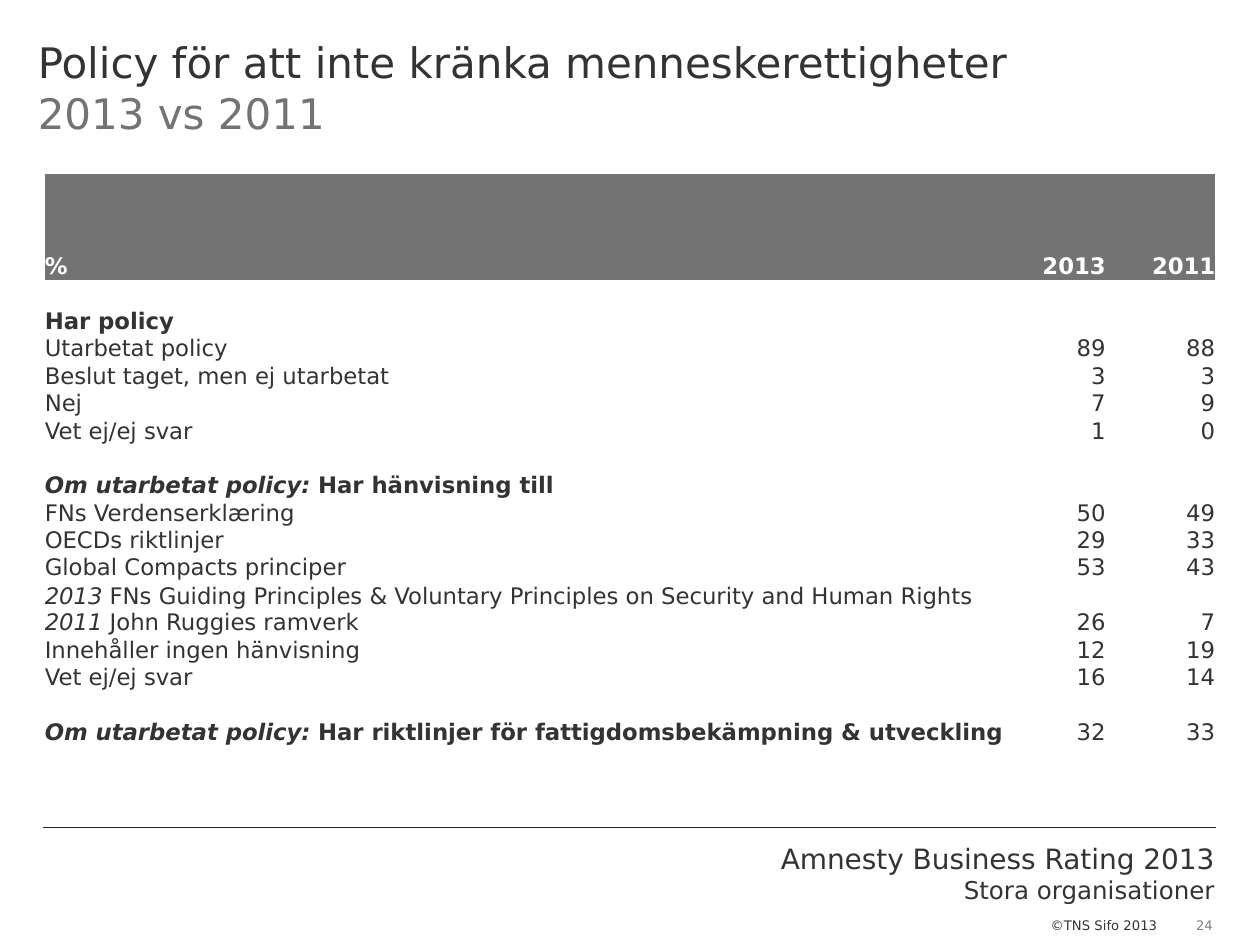
from pptx import Presentation
from pptx import util as u
from pptx.dml.color import RGBColor
from pptx.enum import shapes, text
from pptx.oxml.ns import qn
from lxml import etree

Pt = u.Pt
FONT = "DejaVu Sans"
DARK, GREY, WHITE = "333333", "737373", "FFFFFF"
LEFT, CENTER, RIGHT = text.PP_ALIGN.LEFT, text.PP_ALIGN.CENTER, text.PP_ALIGN.RIGHT
NO_STYLE = "{2D5ABB26-0587-4C30-8999-92F81FD0307C}"
TEXT_SIZE = 13

COLUMNS = [266.4, 33.8, 82.8, 74.2, 74.2, 34.6, 2.2, 37.4, 62.6]
LAST = len(COLUMNS) - 1
HEADER_HEIGHT, ROW_HEIGHT = 60.6, 15.66
IF_POLICY = ("Om utarbetat policy: ", "bi")

# Each row: label lines made of (text, style) runs, value 2013, value 2011,
# last column of the label, first column of the 2013 value.
ROWS = [
    ([[("%", "b")]], "2013", "2011", 0, 5),
    ([], "", "", 0, 5),
    ([[("Har policy", "b")]], "", "", 0, 5),
    ([[("Utarbetat policy", "")]], "89", "88", 0, 5),
    ([[("Beslut taget, men ej utarbetat", "")]], "3", "3", 0, 5),
    ([[("Nej", "")]], "7", "9", 0, 5),
    ([[("Vet ej/ej svar", "")]], "1", "0", 0, 5),
    ([], "", "", 0, 5),
    ([[IF_POLICY, ("Har hänvisning till", "b")]], "", "", 4, 5),
    ([[("FNs Verdenserklæring", "")]], "50", "49", 0, 5),
    ([[("OECDs riktlinjer", "")]], "29", "33", 0, 5),
    ([[("Global Compacts principer", "")]], "53", "43", 0, 5),
    ([[("2013 ", "i"),
       ("FNs Guiding Principles & Voluntary Principles on Security and Human Rights", "")],
      [("2011", "i"), (" John Ruggies ramverk", "")]], "26", "7", 6, 7),
    ([[("Innehåller ingen hänvisning", "")]], "12", "19", 0, 5),
    ([[("Vet ej/ej svar", "")]], "16", "14", 0, 5),
    ([], "", "", 0, 5),
    ([[IF_POLICY, ("Har riktlinjer för fattigdomsbekämpning & utveckling", "b")]],
     "32", "33", 5, 6),
]


def rgb(value):
    return RGBColor.from_string(value)


def add_run(p, words, size, color, style=""):
    r = p.add_run()
    r.text = words
    r.font.name, r.font.size = FONT, Pt(size)
    r.font.color.rgb = rgb(color)
    r.font.bold, r.font.italic = "b" in style, "i" in style


def add_text(s, box, lines, align=LEFT, insets=(7.2, 3.6, 7.2, 3.6), wrap=True):
    """Lines are (text, size, colour); insets run left, top, right, bottom."""
    tf = s.shapes.add_textbox(*map(Pt, box)).text_frame
    tf.word_wrap = wrap
    tf.margin_left, tf.margin_top, tf.margin_right, tf.margin_bottom = map(Pt, insets)
    for i, line in enumerate(lines):
        p = tf.paragraphs[0] if i == 0 else tf.add_paragraph()
        p.alignment = align
        add_run(p, *line)


def add_title(s, box):
    add_text(s, box, [("Policy för att inte kränka menneskerettigheter", 24, DARK),
                      ("2013 vs 2011", 24, GREY)], insets=(21.6, 21, 21.6, 0))


def fill_cell(cell, lines, color, align):
    tf = cell.text_frame
    for i, line in enumerate(lines):
        p = tf.paragraphs[0] if i == 0 else tf.add_paragraph()
        p.alignment = align
        for words, style in line:
            add_run(p, words, TEXT_SIZE, color, style)


def format_cell(cell, header):
    cell.margin_left = cell.margin_top = cell.margin_right = cell.margin_bottom = 0
    cell.vertical_anchor = text.MSO_ANCHOR.BOTTOM
    if header:
        cell.fill.solid()
        cell.fill.fore_color.rgb = rgb(GREY)
    else:
        cell.fill.background()
    # The end mark keeps empty cells from growing to the default text size.
    p = cell.text_frame.paragraphs[0]
    if not p.runs:
        etree.SubElement(p._p, qn("a:endParaRPr"), sz=str(TEXT_SIZE * 100))


def add_policy_table(s, left, top):
    heights = [HEADER_HEIGHT] + [ROW_HEIGHT * max(1, len(row[0])) for row in ROWS[1:]]
    frame = s.shapes.add_table(len(ROWS), len(COLUMNS), Pt(left), Pt(top),
                               Pt(sum(COLUMNS)), Pt(sum(heights)))
    table = frame.table
    table.horz_banding = False
    table._tbl.tblPr.find(qn("a:tableStyleId")).text = NO_STYLE
    for column, width in zip(table.columns, COLUMNS):
        column.width = Pt(width)
    for i, (label, now, before, label_end, value_start) in enumerate(ROWS):
        table.rows[i].height = Pt(heights[i])
        header = i == 0
        color, style = (WHITE, "b") if header else (DARK, "")
        for first, last in ((0, label_end), (value_start, LAST - 1)):
            if last > first:
                table.cell(i, first).merge(table.cell(i, last))
        fill_cell(table.cell(i, 0), label, color, LEFT)
        for column, value in ((value_start, now), (LAST, before)):
            if value:
                fill_cell(table.cell(i, column), [[(value, style)]], color, RIGHT)
        for column in range(len(COLUMNS)):
            format_cell(table.cell(i, column), header)


def add_footer(s, left, top, width):
    right = left + width
    line = s.shapes.add_connector(shapes.MSO_CONNECTOR.STRAIGHT,
                                  Pt(left), Pt(top), Pt(right), Pt(top))
    line.line.color.rgb = rgb("262626")
    line.line.width = Pt(0.75)
    etree.SubElement(line._element.spPr, qn("a:effectLst"))
    add_text(s, (right - 323.5, top + 4.3, 330, 44),
             [("Amnesty Business Rating 2013", 16, DARK),
              ("Stora organisationer", 14, DARK)], RIGHT)
    add_text(s, (right - 101.5, top + 47.5, 79, 16.5), [("©TNS Sifo 2013", 7.5, DARK)])
    add_text(s, (right - 13, top + 51.1, 13, 9.4), [("24", 7.5, "808080")],
             CENTER, (0, 0, 0, 0), False)


def main():
    prs = Presentation()
    prs.slide_width, prs.slide_height = Pt(720), Pt(540)
    s = prs.slides.add_slide(prs.slide_layouts[6])
    add_footer(s, 24.3, 473, 670.5)
    add_title(s, (0, 0, 720, 83.5))
    add_policy_table(s, 25.6, 99.4)
    prs.save("out.pptx")


if __name__ == "__main__":
    main()
